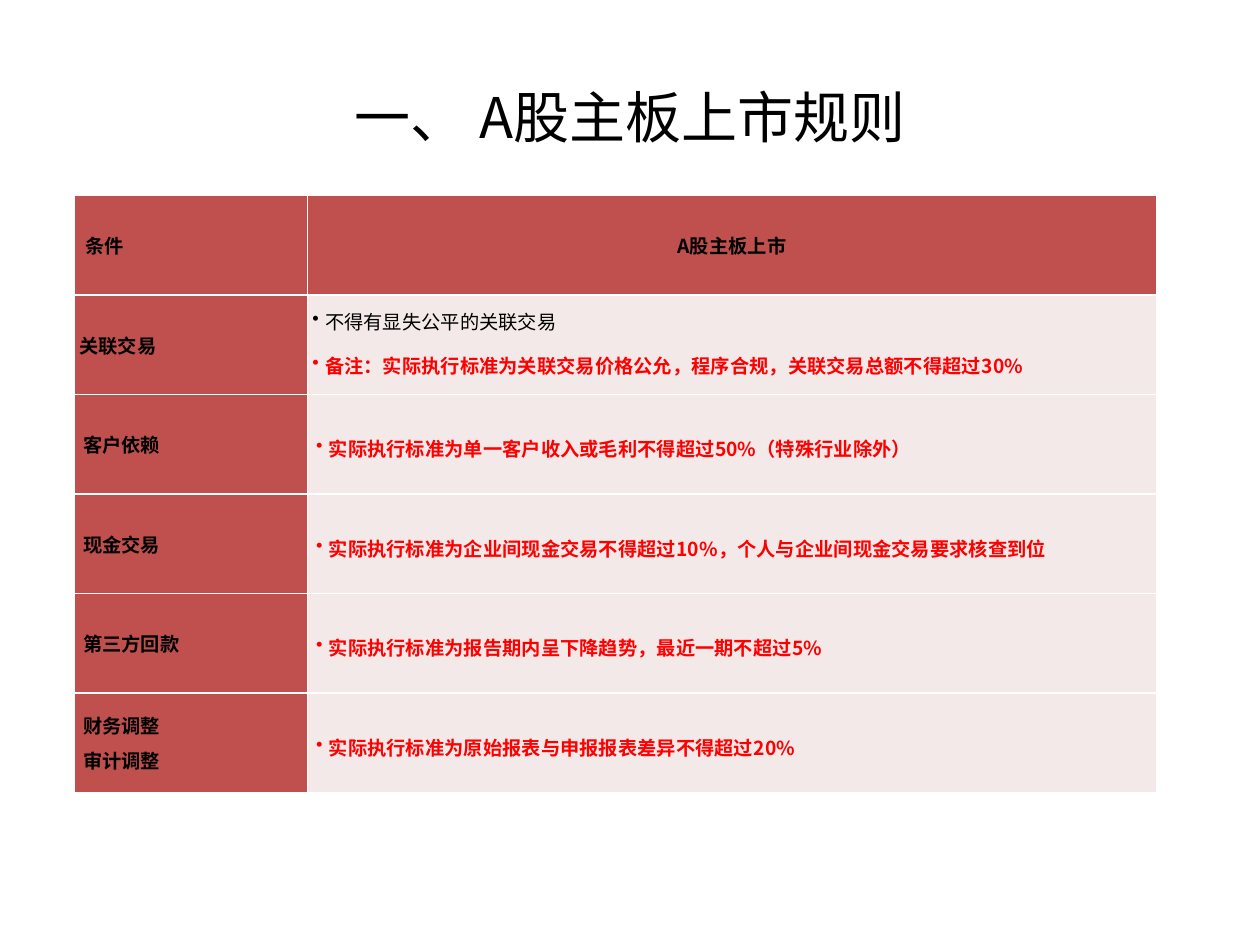
from lxml import etree
from pptx import Presentation
from pptx import util as u
from pptx.dml.color import RGBColor
from pptx.enum import text
from pptx.oxml.ns import qn

FONT = "Noto Sans CJK SC"
BLACK, RED = "000000", "FF0000"
BRICK, BLUSH = "C0504D", "F4E9E9"

TITLE = "一、 A股主板上市规则"
HEAD = ("条件", "A股主板上市")
# Each rule: its names, then its points as (text, colour, bold)
RULES = [
    (["关联交易"], [
        ("不得有显失公平的关联交易", BLACK, False),
        ("备注：实际执行标准为关联交易价格公允，程序合规，关联交易总额不得超过30%", RED, True)]),
    (["客户依赖"], [
        ("实际执行标准为单一客户收入或毛利不得超过50%（特殊行业除外）", RED, True)]),
    (["现金交易"], [
        ("实际执行标准为企业间现金交易不得超过10%，个人与企业间现金交易要求核查到位", RED, True)]),
    (["第三方回款"], [
        ("实际执行标准为报告期内呈下降趋势，最近一期不超过5%", RED, True)]),
    (["财务调整", "审计调整"], [
        ("实际执行标准为原始报表与申报报表差异不得超过20%", RED, True)]),
]
COLS, ROW = (1.85, 6.74), 0.79
LEFT, TOP = 0.59, 1.55
# Cell margins (side, top and bottom): header, first rule, other rules
PADS = [(0.09, 0.04), (0.04, 0.03)] + [(0.07, 0)] * (len(RULES) - 1)


def style(run, size, color=BLACK, bold=False):
    font = run.font
    font.name, font.size, font.bold = FONT, u.Pt(size), bold
    font.color.rgb = RGBColor.from_string(color)
    etree.SubElement(run._r.rPr, qn("a:ea")).set("typeface", FONT)


def space(par, bullet):
    """Add space before of 40 % and, if asked, a hanging bullet."""
    if bullet:
        par.line_spacing = 1.3
    props = par._p.get_or_add_pPr()
    before = etree.SubElement(props, qn("a:spcBef"))
    etree.SubElement(before, qn("a:spcPct")).set("val", "40000")
    if bullet:
        props.set("marL", str(u.Inches(0.1)))
        props.set("indent", str(-u.Inches(0.1)))
        etree.SubElement(props, qn("a:buChar")).set("char", "•")


def fill(cell, lines, color, pad, bullet=False):
    cell.fill.solid()
    cell.fill.fore_color.rgb = RGBColor.from_string(color)
    cell.vertical_anchor = text.MSO_ANCHOR.MIDDLE
    cell.margin_left = cell.margin_right = u.Inches(pad[0])
    cell.margin_top = cell.margin_bottom = u.Inches(pad[1])
    frame = cell.text_frame
    for i, (words, ink, bold) in enumerate(lines):
        par = frame.add_paragraph() if i else frame.paragraphs[0]
        run = par.add_run()
        run.text = words
        style(run, 11, ink, bold)
        space(par, bullet)


def label(words):
    return [(word, BLACK, True) for word in words]


def main():
    deck = Presentation()
    deck.slide_width, deck.slide_height = u.Inches(10), u.Inches(7.5)
    slide = deck.slides.add_slide(deck.slide_layouts[5])

    title = slide.shapes.title
    title.left, title.top = u.Inches(0.5), u.Inches(0.3)
    title.width, title.height = u.Inches(9), u.Inches(1.25)
    title.text_frame.vertical_anchor = text.MSO_ANCHOR.MIDDLE
    par = title.text_frame.paragraphs[0]
    par.alignment = text.PP_ALIGN.CENTER
    run = par.add_run()
    run.text = TITLE
    style(run, 32)

    count = len(RULES) + 1
    table = slide.shapes.add_table(
        count, len(COLS), u.Inches(LEFT), u.Inches(TOP),
        u.Inches(sum(COLS)), u.Inches(ROW * count)).table
    for col, width in zip(table.columns, COLS):
        col.width = u.Inches(width)
    for row in table.rows:
        row.height = u.Inches(ROW)

    for col, word in enumerate(HEAD):
        fill(table.cell(0, col), label([word]), BRICK, PADS[0])
    table.cell(0, 1).text_frame.paragraphs[0].alignment = text.PP_ALIGN.CENTER
    for row, (names, points) in enumerate(RULES, 1):
        fill(table.cell(row, 0), label(names), BRICK, PADS[row])
        fill(table.cell(row, 1), points, BLUSH, PADS[row], bullet=True)
    table.cell(1, 1).vertical_anchor = text.MSO_ANCHOR.TOP

    deck.save("out.pptx")


if __name__ == "__main__":
    main()
